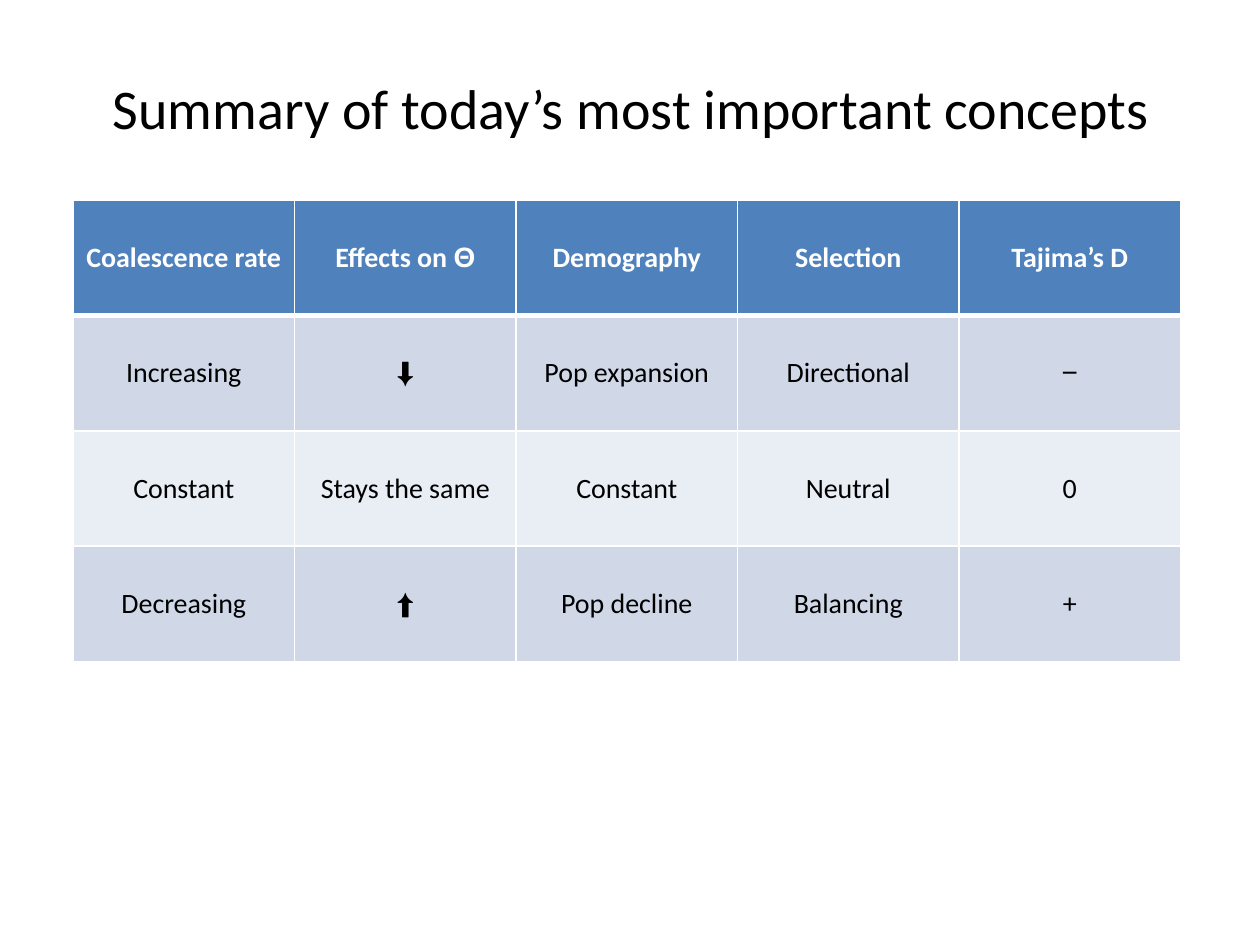
from pptx import Presentation
from pptx.dml.color import RGBColor
from pptx.enum.text import MSO_ANCHOR, PP_ALIGN
from pptx.oxml import parse_xml
from pptx.oxml.ns import nsdecls
from pptx.util import Inches, Pt

TITLE = "Summary of today’s most important concepts"
HEADERS = ["Coalescence rate", "Effects on Θ", "Demography", "Selection", "Tajima’s D"]
ROWS = [
    ["Increasing", "⬇", "Pop expansion", "Directional", "−"],
    ["Constant", "Stays the same", "Constant", "Neutral", "0"],
    ["Decreasing", "⬆", "Pop decline", "Balancing", "+"],
]
ARIAL_SYMBOLS = "Θ⬇⬆−"

BLACK = RGBColor(0x00, 0x00, 0x00)
WHITE = RGBColor(0xFF, 0xFF, 0xFF)
HEADER_BLUE = RGBColor(0x4F, 0x81, 0xBD)
BANDS = [RGBColor(0xD0, 0xD8, 0xE8), RGBColor(0xE9, 0xED, 0xF4)]

TABLE_LEFT, TABLE_TOP = 0.58, 1.59
TABLE_WIDTH, TABLE_HEIGHT = 8.79, 3.66


def add_run(paragraph, text, size, color, bold=False):
    run = paragraph.add_run()
    run.text = text
    run.font.name = "Arial" if text in ARIAL_SYMBOLS else "Calibri"
    run.font.size = Pt(size)
    run.font.bold = bold
    run.font.color.rgb = color


def split_symbols(text):
    """Separate a closing symbol from the words before it."""
    if len(text) > 1 and text[-1] in ARIAL_SYMBOLS:
        return [text[:-1], text[-1]]
    return [text]


def set_borders(cell, bottom=1, top=1):
    properties = cell._tc.get_or_add_tcPr()
    widths = {"lnL": 1, "lnR": 1, "lnT": top, "lnB": bottom}
    for position, (tag, width) in enumerate(widths.items()):
        properties.insert(position, parse_xml(
            f'<a:{tag} {nsdecls("a")} w="{Pt(width)}"><a:solidFill>'
            f'<a:srgbClr val="{WHITE}"/></a:solidFill></a:{tag}>'))


presentation = Presentation()
presentation.slide_width, presentation.slide_height = Inches(10), Inches(7.5)
slide = presentation.slides.add_slide(presentation.slide_layouts[6])

# Title
title = slide.shapes.add_textbox(Inches(0.51), Inches(0.51), Inches(9), Inches(0.87))
title_frame = title.text_frame
title_frame.word_wrap = True
title_frame.margin_top = Inches(0.07)
title_paragraph = title_frame.paragraphs[0]
title_paragraph.alignment = PP_ALIGN.CENTER
add_run(title_paragraph, TITLE, 32, BLACK)

# Table
contents = [HEADERS] + ROWS
table = slide.shapes.add_table(
    len(contents), len(HEADERS), Inches(TABLE_LEFT), Inches(TABLE_TOP),
    Inches(TABLE_WIDTH), Inches(TABLE_HEIGHT)).table

for row_index, texts in enumerate(contents):
    is_header = row_index == 0
    for column_index, text in enumerate(texts):
        cell = table.cell(row_index, column_index)
        cell.vertical_anchor = MSO_ANCHOR.MIDDLE
        cell.fill.solid()
        cell.fill.fore_color.rgb = HEADER_BLUE if is_header else BANDS[(row_index - 1) % 2]
        set_borders(cell, bottom=3 if is_header else 1, top=3 if row_index == 1 else 1)
        paragraph = cell.text_frame.paragraphs[0]
        paragraph.alignment = PP_ALIGN.CENTER
        for part in split_symbols(text):
            add_run(paragraph, part, 16, WHITE if is_header else BLACK, is_header)

presentation.save("out.pptx")
